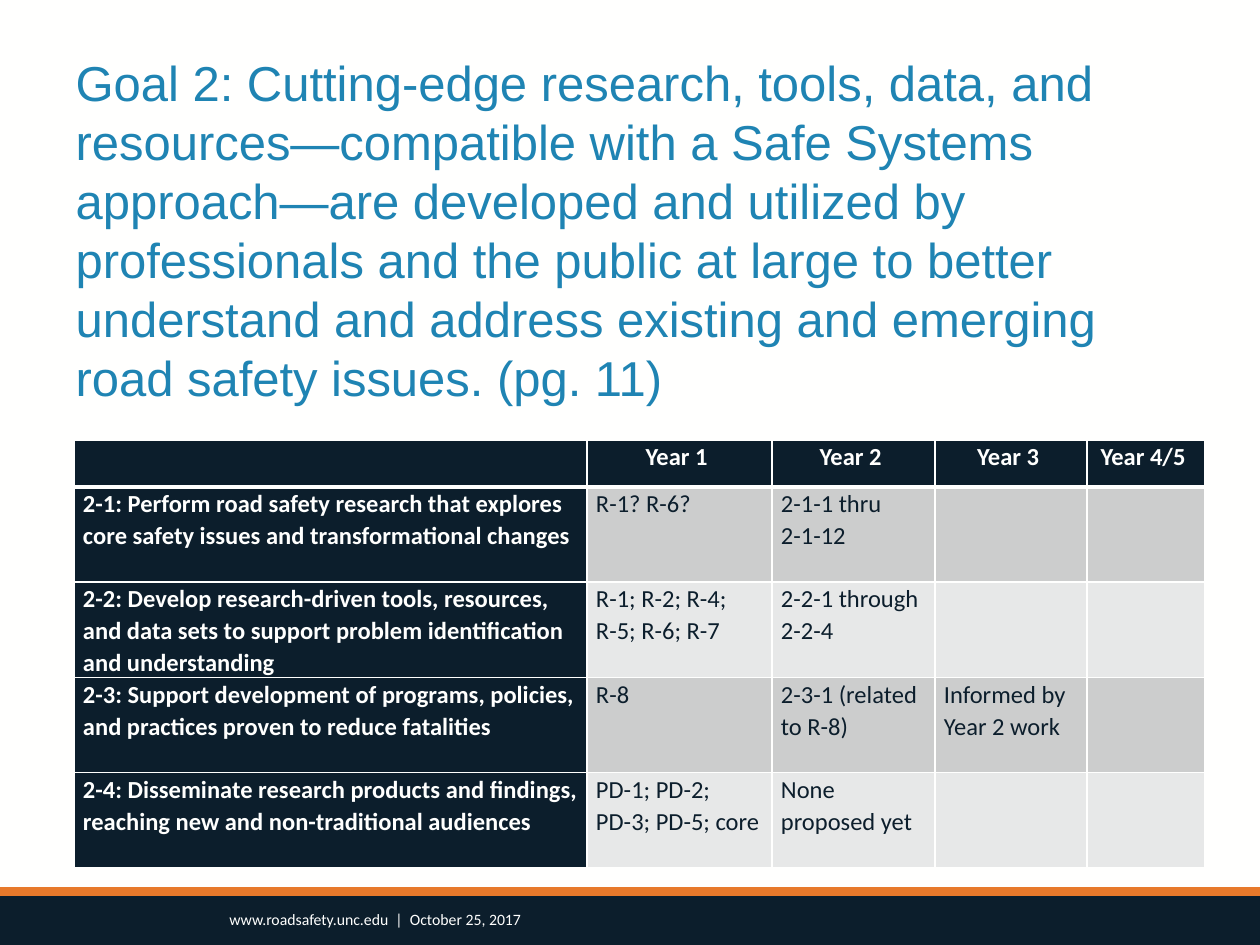
from lxml.etree import SubElement
from pptx import Presentation
from pptx.dml.color import RGBColor
from pptx.enum.shapes import MSO_SHAPE
from pptx.enum.text import MSO_ANCHOR, PP_ALIGN
from pptx.oxml.ns import qn
from pptx.util import Emu, Pt

SCALE = 914400 / 126
COLORS = {
    "paper": "FFFFFE",
    "navy": "0C1E2C",
    "orange": "E7792B",
    "blue": "1F84B3",
    "band_dark": "CCCDCD",
    "band_light": "E7E8E8",
}


def px(*lengths):
    return [Emu(round(length * SCALE)) for length in lengths]


def write(frame, text, size=14, font="Calibri", color="navy", bold=False,
          align=PP_ALIGN.LEFT, spacing=1.0, anchor=MSO_ANCHOR.TOP):
    frame.word_wrap = True
    frame.vertical_anchor = anchor
    frame.text = text
    for para in frame.paragraphs:
        para.alignment = align
        para.line_spacing = spacing
        for span in para.runs:
            span.font.size = Pt(size)
            span.font.name = font
            span.font.bold = bold
            span.font.color.rgb = RGBColor.from_string(COLORS[color])


deck = Presentation()
deck.slide_width, deck.slide_height = px(1260, 945)
page = deck.slides.add_slide(deck.slide_layouts[5])
page.background.fill.solid()
page.background.fill.fore_color.rgb = RGBColor.from_string(COLORS["paper"])

for top, height, color in [(887, 58, "navy"), (887, 9, "orange")]:
    bar = page.shapes.add_shape(MSO_SHAPE.RECTANGLE, *px(0, top, 1260, height))
    bar.shadow.inherit = False
    bar.fill.solid()
    bar.fill.fore_color.rgb = RGBColor.from_string(COLORS[color])
    bar.line.fill.background()

title = page.shapes.title
title.left, title.top, title.width, title.height = px(63, 71, 1134, 317)
write(
    title.text_frame,
    "Goal 2: Cutting-edge research, tools, data, and resources—compatible with "
    "a Safe Systems approach—are developed and utilized by professionals and "
    "the public at large to better understand and address existing and "
    "emerging road safety issues. (pg. 11)",
    size=28, font="Arial", color="blue", anchor=MSO_ANCHOR.MIDDLE,
)

plan = [
    ["", "Year 1 ", "Year 2 ", "Year 3 ", "Year 4/5 "],
    ["2-1: Perform road safety research that explores core safety issues and "
     "transformational changes",
     "R-1? R-6?", "2-1-1 thru\n2-1-12", "", ""],
    ["2-2: Develop research-driven tools, resources, and data sets to support "
     "problem identification and understanding",
     "R-1; R-2; R-4; R-5; R-6; R-7", "2-2-1 through 2-2-4", "", ""],
    ["2-3: Support development of programs, policies, and practices proven to "
     "reduce fatalities",
     "R-8", "2-3-1 (related to R-8)", "Informed by Year 2 work", ""],
    ["2-4: Disseminate research products and findings, reaching new and "
     "non-traditional audiences",
     "PD-1; PD-2; PD-3; PD-5; core", "None proposed yet", "", ""],
]
widths = px(513, 185, 163, 152, 118)
heights = px(47, 95, 95, 95, 95)
table = page.shapes.add_table(
    len(plan), len(widths), *px(74, 440), sum(widths), sum(heights)
).table
table.horz_banding = False
for column, width in zip(table.columns, widths):
    column.width = width
for row, height in zip(table.rows, heights):
    row.height = height

for row_index, texts in enumerate(plan):
    for column_index, text in enumerate(texts):
        cell = table.cell(row_index, column_index)
        is_top = row_index == 0
        is_heading = is_top or column_index == 0
        cell.margin_left, cell.margin_right = px(9, 9)
        cell.margin_top = cell.margin_bottom = 0
        write(
            cell.text_frame, text, spacing=1.07, bold=is_heading,
            color="paper" if is_heading else "navy",
            align=PP_ALIGN.CENTER if is_top else PP_ALIGN.LEFT,
        )
        for side in ("L", "R", "T", "B"):
            thick = (side == "B" and is_top) or (side == "T" and row_index == 1)
            border = SubElement(cell._tc.get_or_add_tcPr(), qn(f"a:ln{side}"),
                                w=str(Pt(3 if thick else 1)))
            paint = SubElement(border, qn("a:solidFill"))
            SubElement(paint, qn("a:srgbClr"), val=COLORS["paper"])
        band = "band_dark" if row_index % 2 else "band_light"
        cell.fill.solid()
        cell.fill.fore_color.rgb = RGBColor.from_string(
            COLORS["navy" if is_heading else band])

footer = page.shapes.add_textbox(*px(217, 902, 687, 27)).text_frame
footer.margin_top = footer.margin_bottom = 0
write(footer, "www.roadsafety.unc.edu  |  October 25, 2017", size=9,
      color="paper", anchor=MSO_ANCHOR.BOTTOM)

deck.save("out.pptx")
